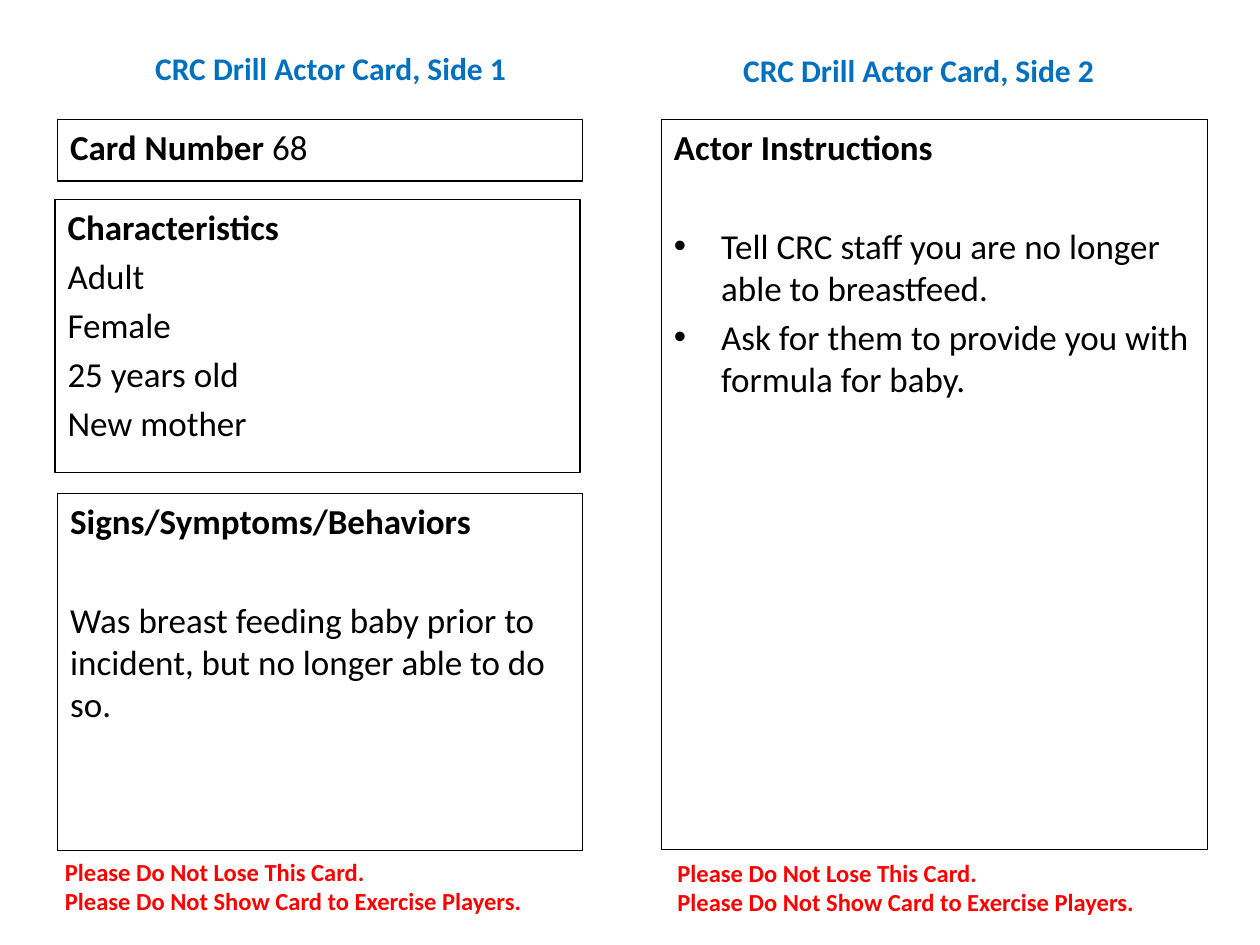
from lxml import etree
from pptx import Presentation
from pptx import util as u
from pptx.dml.color import RGBColor
from pptx.enum import shapes, text
from pptx.oxml.ns import qn

Pt = u.Pt
BLACK, BLUE, RED = "000000", "0070C0", "FF0000"
LINE_GAP = 4       # before every line in a panel
HEADING_GAP = 28.2   # one empty line below a heading
BULLET_INDENT = 27


def colour(hex_code):
    return RGBColor.from_string(hex_code)


def add_bullet(paragraph):
    properties = paragraph._p.get_or_add_pPr()
    properties.set("marL", str(Pt(BULLET_INDENT)))
    properties.set("indent", str(-Pt(BULLET_INDENT)))
    etree.SubElement(properties, qn("a:buFont")).set("typeface", "Arial")
    etree.SubElement(properties, qn("a:buChar")).set("char", "•")


def write(paragraph, words, size=20, hex_code=BLACK, bold=False, align="LEFT",
          before=0, after=0, bullet=False):
    """Add a formatted run and set the format of its paragraph."""
    paragraph.alignment = getattr(text.PP_ALIGN, align)
    paragraph.space_before, paragraph.space_after = Pt(before), Pt(after)
    if bullet:
        add_bullet(paragraph)
    run = paragraph.add_run()
    run.text = words
    run.font.name, run.font.size, run.font.bold = "Calibri", Pt(size), bold
    run.font.color.rgb = colour(hex_code)


def next_paragraph(frame):
    first = frame.paragraphs[0]
    return frame.add_paragraph() if first.runs else first


class Card:
    """Style of the actor card and the slide it is built on."""

    def __init__(self, slide):
        self.slide = slide

    def caption(self, left, top, width, height, lines, anchor="TOP", **style):
        box = self.slide.shapes.add_textbox(Pt(left), Pt(top), Pt(width), Pt(height))
        frame = box.text_frame
        frame.word_wrap = True
        frame.vertical_anchor = getattr(text.MSO_ANCHOR, anchor)
        for line in lines:
            write(next_paragraph(frame), line, bold=True, **style)

    def title(self, left, top, words):
        self.caption(left, top, 318, 56, [words], anchor="MIDDLE",
                     size=18, hex_code=BLUE, align="CENTER")

    def warning(self, left, top):
        self.caption(left, top, 303, 41,
                     ["Please Do Not Lose This Card.",
                      "Please Do Not Show Card to Exercise Players."],
                     size=14, hex_code=RED)

    def panel(self, left, top, width, height, heading, lines=(), value="",
              heading_gap=0, bullet=False):
        box = self.slide.shapes.add_shape(
            shapes.MSO_SHAPE.RECTANGLE, Pt(left), Pt(top), Pt(width), Pt(height))
        box.shadow.inherit = False
        box.fill.background()
        box.line.color.rgb = colour(BLACK)
        box.line.width = Pt(0.75)
        frame = box.text_frame
        frame.word_wrap = True
        frame.vertical_anchor = text.MSO_ANCHOR.TOP
        head = frame.paragraphs[0]
        write(head, heading, bold=True, before=LINE_GAP, after=heading_gap)
        if value:
            write(head, value, before=LINE_GAP)
        for line in lines:
            write(next_paragraph(frame), line, before=LINE_GAP, bullet=bullet)


def main():
    deck = Presentation()
    deck.slide_width, deck.slide_height = Pt(720), Pt(540)
    card = Card(deck.slides.add_slide(deck.slide_layouts[6]))

    card.title(30, 11, "CRC Drill Actor Card, Side 1")
    card.panel(33, 68.4, 300, 35, "Card Number ", value="68")
    card.panel(31.5, 114, 300, 156, "Characteristics",
               ["Adult", "Female", "25 years old", "New mother"])
    card.panel(33, 282, 300, 204, "Signs/Symptoms/Behaviors",
               ["Was breast feeding baby prior to incident, "
                "but no longer able to do so."],
               heading_gap=HEADING_GAP)
    card.warning(30, 486)

    card.title(366, 12, "CRC Drill Actor Card, Side 2")
    card.panel(378, 68.4, 312, 417, "Actor Instructions",
               ["Tell CRC staff you are no longer able to breastfeed.",
                "Ask for them to provide you with formula for baby."],
               heading_gap=HEADING_GAP, bullet=True)
    card.warning(380, 486.6)

    deck.save("out.pptx")


if __name__ == "__main__":
    main()
